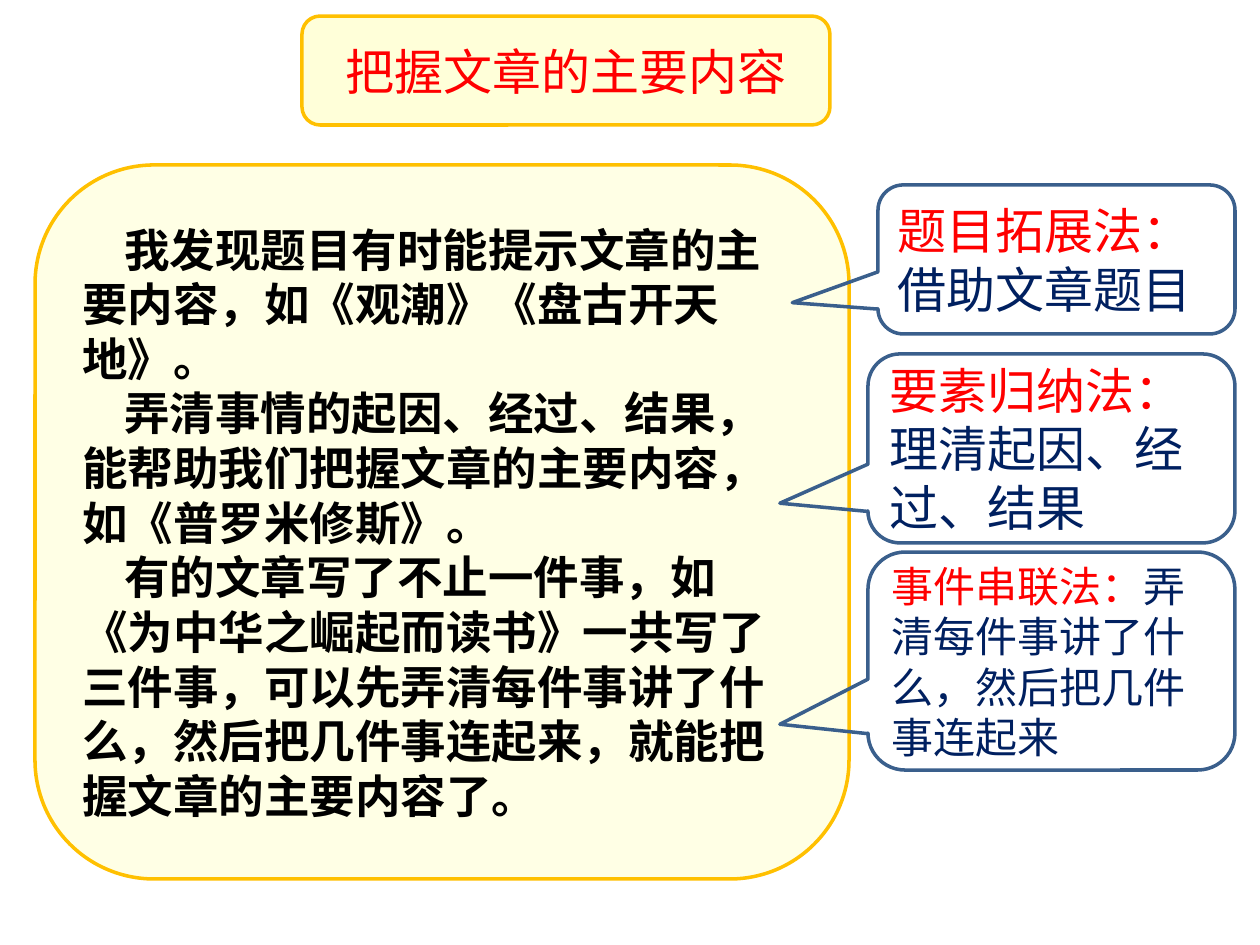
"""Build a slide on grasping the main content of an article."""
from dataclasses import dataclass

from pptx import Presentation
from pptx import util as u
from pptx.dml.color import RGBColor
from pptx.enum import shapes, text
from pptx.oxml.ns import qn

SCALE = 914400 / 126
COLORS = {
    "cream": "FFFFE5",
    "light_yellow": "FFFFD9",
    "gold": "FFC000",
    "steel": "3A5F8C",
    "red": "FF0000",
    "navy": "002060",
    "black": "000000",
}
CJK_FONT = "Noto Sans CJK SC"
CALLOUT_ADJUSTMENTS = (-0.74, 0.29, 0.17)


@dataclass(frozen=True)
class Run:
    text: str
    color: str


@dataclass(frozen=True)
class Panel:
    box: tuple[int, int, int, int]
    paragraphs: tuple[tuple[Run, ...], ...]
    size: int
    line: str
    fill: str | None = None
    font: str = CJK_FONT
    bold: bool = False
    centered: bool = False
    indent: int = 0
    kind: shapes.MSO_SHAPE = shapes.MSO_SHAPE.ROUNDED_RECTANGLE
    adjustments: tuple[float, ...] = ()


def px(length: int) -> u.Emu:
    """Turn px into EMU."""
    return u.Emu(round(length * SCALE))


def rgb(name: str) -> RGBColor:
    """Look up a named colour."""
    return RGBColor.from_string(COLORS[name])


def callout(box: tuple[int, int, int, int], size: int, *paragraphs: tuple[Run, ...]) -> Panel:
    """Describe a method callout pointing at the notes."""
    return Panel(box, paragraphs, size, "steel",
                 kind=shapes.MSO_SHAPE.ROUNDED_RECTANGULAR_CALLOUT,
                 adjustments=CALLOUT_ADJUSTMENTS)


def write_paragraph(paragraph, runs: tuple[Run, ...], panel: Panel) -> None:
    """Fill one paragraph with its runs."""
    paragraph.alignment = text.PP_ALIGN.CENTER if panel.centered else text.PP_ALIGN.LEFT
    paragraph.line_spacing = u.Pt(panel.size * 1.2)
    paragraph.font.name = panel.font
    paragraph.font.size = u.Pt(panel.size)
    paragraph.font.bold = panel.bold
    if panel.indent:
        properties = paragraph._p.get_or_add_pPr()
        properties.set("marL", "0")
        properties.set("indent", str(px(panel.indent)))
    for item in runs:
        run = paragraph.add_run()
        run.text = item.text
        run.font.name = panel.font
        run.font.size = u.Pt(panel.size)
        run.font.bold = panel.bold
        run.font.color.rgb = rgb(item.color)
        east_asian = run._r.get_or_add_rPr().makeelement(qn("a:ea"), {"typeface": CJK_FONT})
        run._r.rPr.find(qn("a:latin")).addnext(east_asian)


def draw_panel(slide, panel: Panel) -> None:
    """Draw one outlined panel with its text."""
    shape = slide.shapes.add_shape(panel.kind, *map(px, panel.box))
    shape.shadow.inherit = False
    for index, value in enumerate(panel.adjustments):
        shape.adjustments[index] = value
    if panel.fill:
        shape.fill.solid()
        shape.fill.fore_color.rgb = rgb(panel.fill)
    else:
        shape.fill.background()
    shape.line.color.rgb = rgb(panel.line)
    shape.line.width = u.Pt(2)
    frame = shape.text_frame
    frame.word_wrap = True
    frame.vertical_anchor = text.MSO_ANCHOR.MIDDLE
    for index, runs in enumerate(panel.paragraphs):
        paragraph = frame.add_paragraph() if index else frame.paragraphs[0]
        write_paragraph(paragraph, runs, panel)


NOTES = (
    "我发现题目有时能提示文章的主要内容，如《观潮》《盘古开天地》。",
    "弄清事情的起因、经过、结果，能帮助我们把握文章的主要内容，如《普罗米修斯》。",
    "有的文章写了不止一件事，如《为中华之崛起而读书》一共写了三件事，"
    "可以先弄清每件事讲了什么，然后把几件事连起来，就能把握文章的主要内容了。",
)
PANELS = (
    Panel((35, 165, 814, 714), tuple((Run(note, "black"),) for note in NOTES), 26, "gold",
          fill="cream", font="Arial", bold=True, indent=42),
    Panel((302, 16, 528, 109), ((Run("把握文章的主要内容", "red"),),), 28, "gold",
          fill="light_yellow", centered=True),
    callout((878, 185, 357, 149), 28,
            (Run("题目拓展法：", "red"),), (Run("借助文章题目", "navy"),)),
    callout((868, 354, 367, 189), 28,
            (Run("要素归纳法：", "red"), Run("理清起因、经过、结果", "navy"))),
    callout((868, 552, 367, 218), 24,
            (Run("事件串联法：", "red"), Run("弄清每件事讲了什么，然后把几件事连起来", "navy"))),
)


def main() -> None:
    """Build and save the presentation."""
    presentation = Presentation()
    presentation.slide_width = px(1260)
    presentation.slide_height = px(945)
    slide = presentation.slides.add_slide(presentation.slide_layouts[6])
    for panel in PANELS:
        draw_panel(slide, panel)
    presentation.save("out.pptx")


if __name__ == "__main__":
    main()
